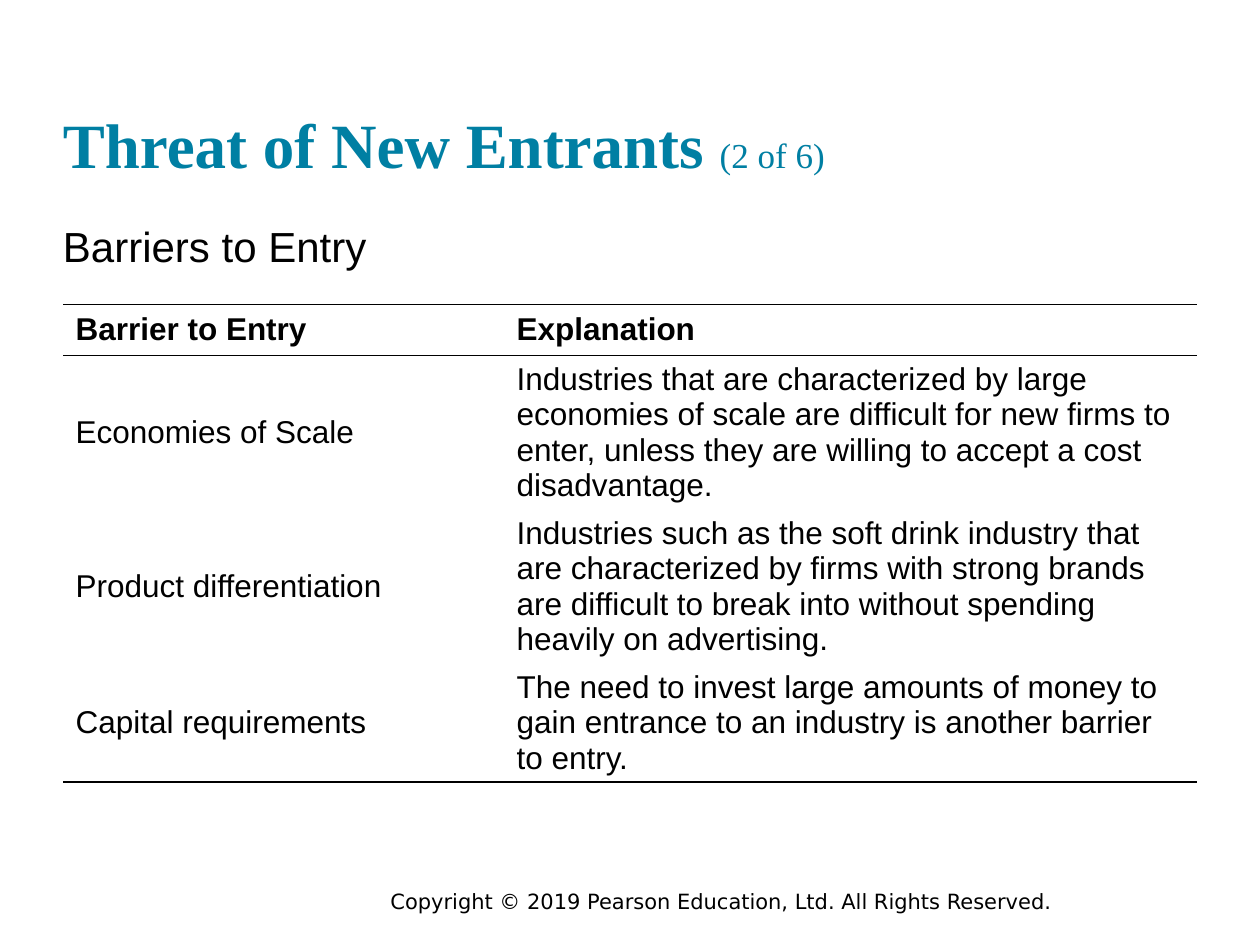
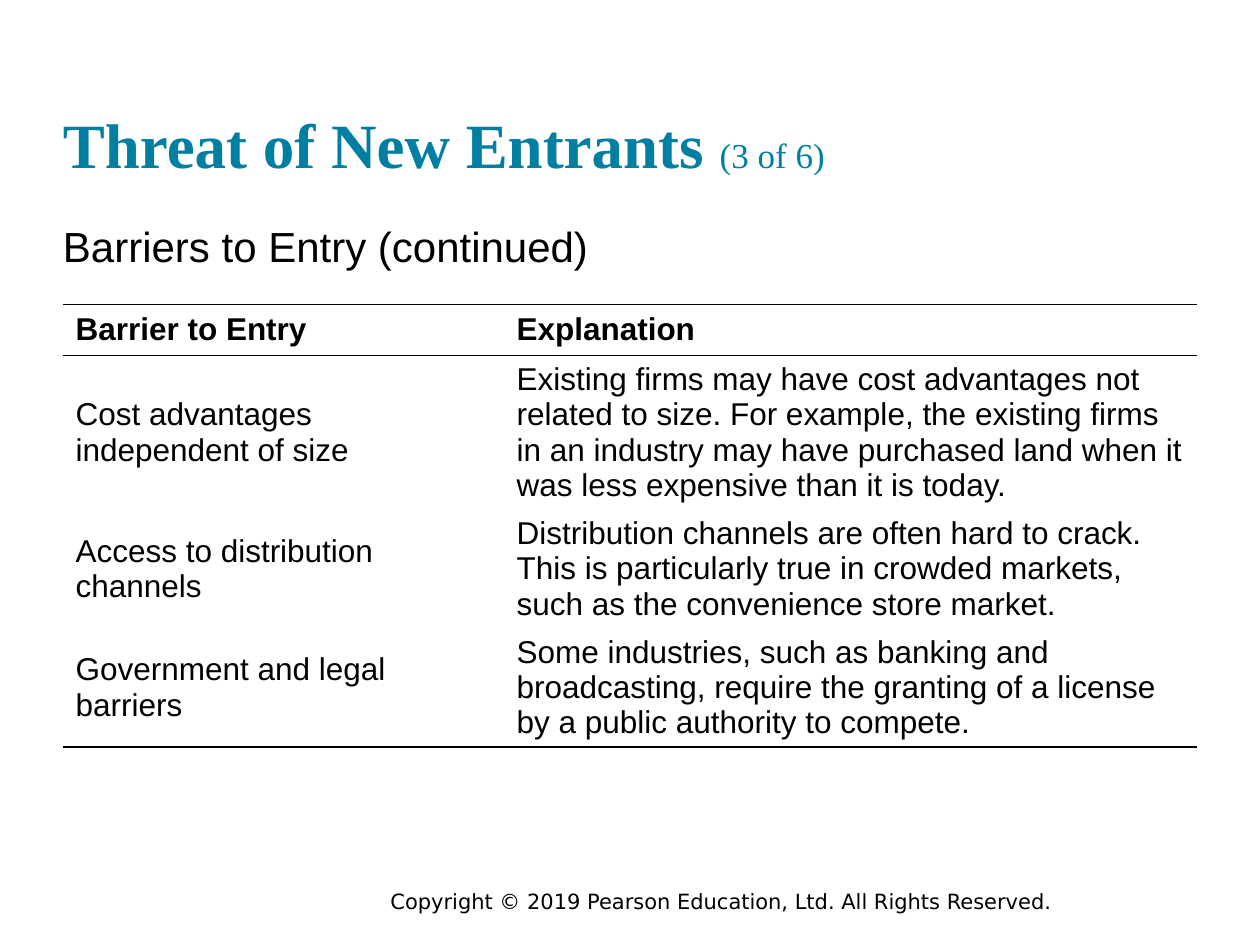
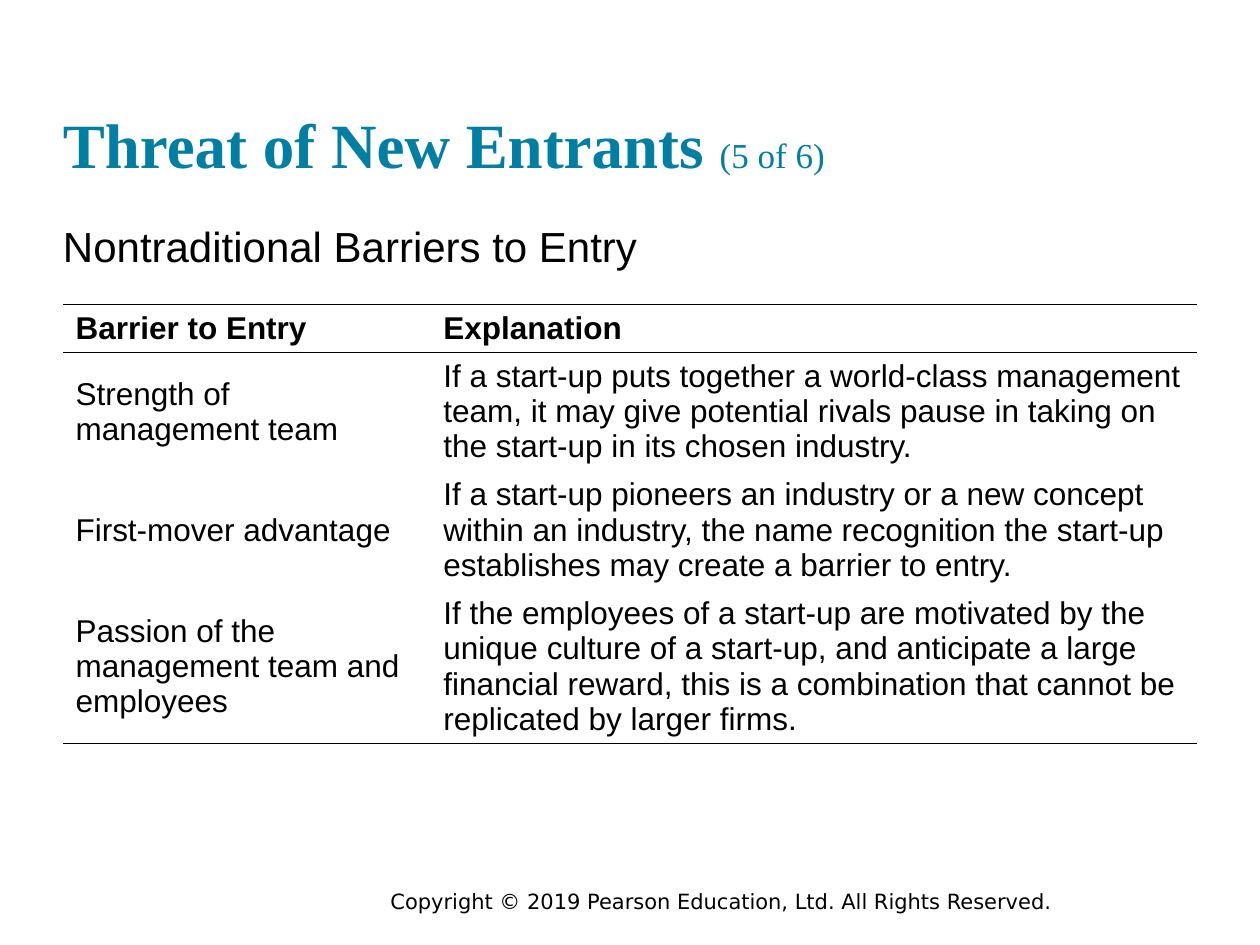
from lxml.etree import SubElement
from pptx import Presentation
from pptx.dml.color import RGBColor as RGB
from pptx.enum.text import MSO_ANCHOR as Anchor
from pptx.oxml.ns import qn
from pptx.util import Pt

COLORS = {"title": "007FA3", "text": "000000", "paper": "FFFFFF"}
TITLE_FONT, BODY_FONT, FOOTER_FONT = "Times New Roman", "Arial", "DejaVu Sans"
LEFT, WIDTH = 36, 648
LINE, ROW_PADDING = 20.2, 7.2
PLAIN_TABLE = "{2D5ABB26-0587-4C30-8999-92F81FD0307C}"
HEADER = ("Barrier to Entry", "Explanation")
COPYRIGHT = "Copyright © 2019 Pearson Education, Ltd. All Rights Reserved."


class Deck:
    def __init__(self):
        self.prs = Presentation()
        self.prs.slide_width, self.prs.slide_height = Pt(720), Pt(540)
        self.s = None

    def new_slide(self):
        self.s = self.prs.slides.add_slide(self.prs.slide_layouts[6])
        self.footer()

    def style(self, r, size, font=BODY_FONT, color="text", bold=False):
        r.font.size, r.font.name, r.font.bold = Pt(size), font, bold
        r.font.color.rgb = RGB.from_string(COLORS[color])

    def box(self, x, y, w, h, inset=True):
        tf = self.s.shapes.add_textbox(Pt(x), Pt(y), Pt(w), Pt(h)).text_frame
        tf.word_wrap = True
        if not inset:
            tf.margin_left = tf.margin_right = tf.margin_top = tf.margin_bottom = 0
        return tf

    def footer(self):
        tf = self.box(216, 504, 480, 21.6)
        tf.text = COPYRIGHT
        self.style(tf.paragraphs[0].runs[0], 12, FOOTER_FONT)

    def title(self, text, part):
        tf = self.box(LEFT, 17, WIDTH, 86.4, inset=False)
        tf.vertical_anchor = Anchor.BOTTOM
        p = tf.paragraphs[0]
        for words, size, bold in ((text + " ", 36, True), (part, 20, False)):
            r = p.add_run()
            r.text = words
            self.style(r, size, TITLE_FONT, "title", bold)

    def subtitle(self, text):
        tf = self.box(LEFT, 126.2, WIDTH, 36, inset=False)
        tf.text = text
        self.style(tf.paragraphs[0].runs[0], 24)

    def borders(self, cell, ruled):
        """Rule the named sides of a cell and clear the others."""
        tcPr = cell._tc.get_or_add_tcPr()
        for i, side in enumerate(("lnL", "lnR", "lnT", "lnB")):
            ln = tcPr.makeelement(qn("a:" + side), {"w": str(Pt(1))})
            if side in ruled:
                fill = SubElement(ln, qn("a:solidFill"))
                SubElement(fill, qn("a:srgbClr"), val=COLORS["text"])
            else:
                SubElement(ln, qn("a:noFill"))
            tcPr.insert(i, ln)

    def table(self, barriers, first_col, header_height, line_counts):
        rows = [HEADER, *barriers]
        heights = [header_height, *(n * LINE + ROW_PADDING for n in line_counts)]
        # Rules above and below the header, and under the last row
        rules = {0: ("lnT", "lnB"), 1: ("lnT",), len(rows) - 1: ("lnB",)}
        gf = self.s.shapes.add_table(len(rows), 2, Pt(LEFT), Pt(174),
                                     Pt(WIDTH), Pt(sum(heights)))
        table = gf.table
        table.horz_banding = False
        table._tbl.tblPr.find(qn("a:tableStyleId")).text = PLAIN_TABLE
        for col, width in zip(table.columns, (first_col, WIDTH - first_col)):
            col.width = Pt(width)
        for i, (texts, height) in enumerate(zip(rows, heights)):
            table.rows[i].height = Pt(height)
            for cell, text in zip(table.rows[i].cells, texts):
                cell.text = text
                cell.vertical_anchor = Anchor.MIDDLE
                cell.margin_top = cell.margin_bottom = Pt(0.8)
                cell.fill.solid()
                cell.fill.fore_color.rgb = RGB.from_string(COLORS["paper"])
                self.style(cell.text_frame.paragraphs[0].runs[0], 18, bold=i == 0)
                self.borders(cell, rules.get(i, ()))


# Part, subtitle, first column, header height, text lines per row, rows
SLIDES = [
    ("(2 of 6)", "Barriers to Entry", 252, 29.2, (4, 4, 3), [
        ("Economies of Scale",
         "Industries that are characterized by large economies of scale are difficult "
         "for new firms to enter, unless they are willing to accept a cost disadvantage."),
        ("Product differentiation",
         "Industries such as the soft drink industry that are characterized by firms with "
         "strong brands are difficult to break into without spending heavily on advertising."),
        ("Capital requirements",
         "The need to invest large amounts of money to gain entrance to an industry is "
         "another barrier to entry."),
    ]),
    ("(3 of 6)", "Barriers to Entry (continued)", 252, 29.2, (4, 3, 3), [
        ("Cost advantages independent of size",
         "Existing firms may have cost advantages not related to size. For example, the "
         "existing firms in an industry may have purchased land when it was less expensive "
         "than it is today."),
        ("Access to distribution channels",
         "Distribution channels are often hard to crack. This is particularly true in "
         "crowded markets, such as the convenience store market."),
        ("Government and legal barriers",
         "Some industries, such as banking and broadcasting, require the granting of a "
         "license by a public authority to compete."),
    ]),
    ("(5 of 6)", "Nontraditional Barriers to Entry", 210.2, 27.4, (3, 3, 4), [
        ("Strength of management team",
         "If a start-up puts together a world-class management team, it may give potential "
         "rivals pause in taking on the start-up in its chosen industry."),
        ("First-mover advantage",
         "If a start-up pioneers an industry or a new concept within an industry, the name "
         "recognition the start-up establishes may create a barrier to entry."),
        ("Passion of the management team and employees",
         "If the employees of a start-up are motivated by the unique culture of a start-up, "
         "and anticipate a large financial reward, this is a combination that cannot be "
         "replicated by larger firms."),
    ]),
]


def main():
    deck = Deck()
    for part, subtitle, first_col, header_height, line_counts, barriers in SLIDES:
        deck.new_slide()
        deck.title("Threat of New Entrants", part)
        deck.subtitle(subtitle)
        deck.table(barriers, first_col, header_height, line_counts)
    deck.prs.save("out.pptx")


if __name__ == "__main__":
    main()
